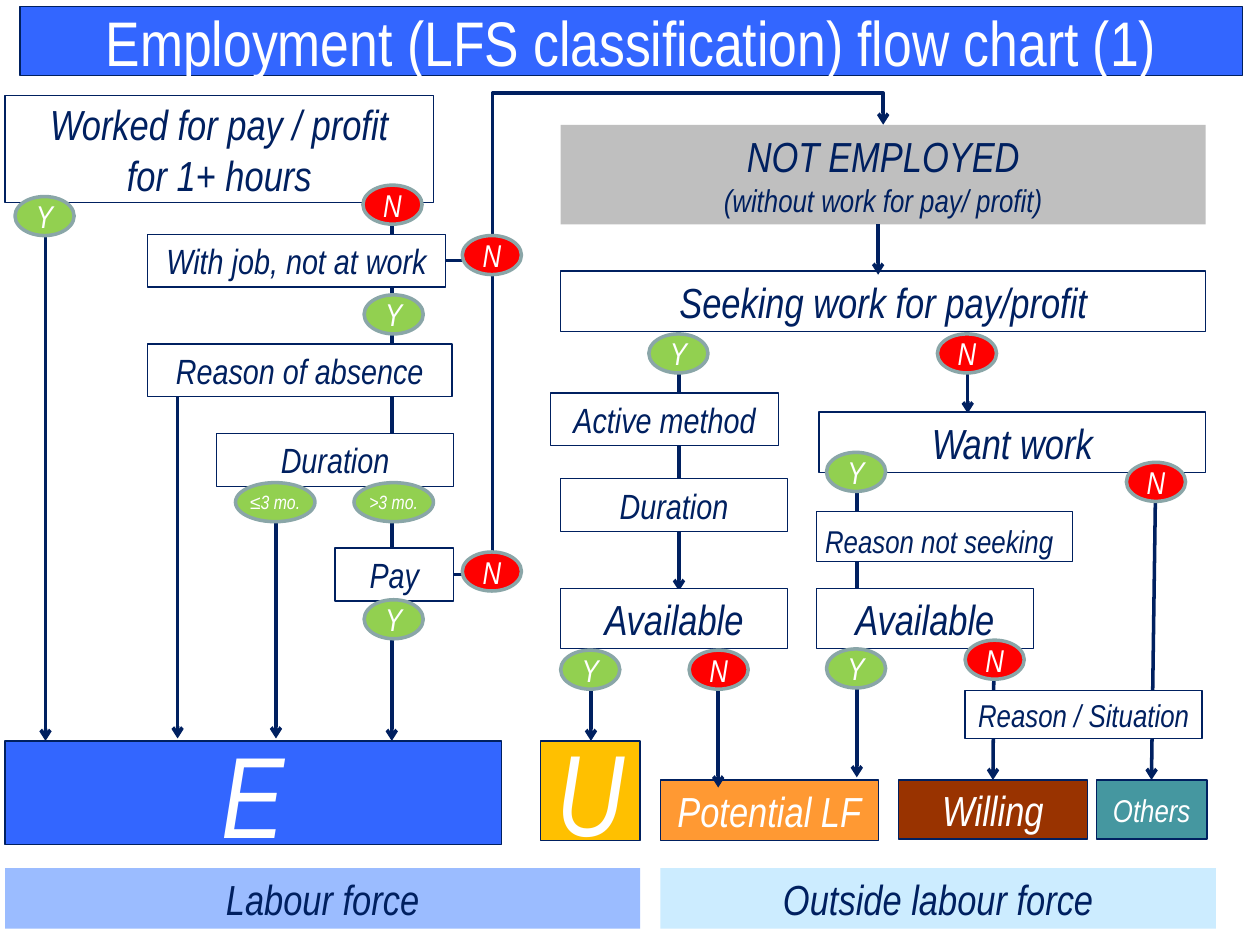
from lxml import etree
from pptx import Presentation
from pptx.dml.color import RGBColor
from pptx.enum.shapes import MSO_CONNECTOR, MSO_SHAPE
from pptx.enum.text import MSO_ANCHOR, PP_ALIGN
from pptx.oxml.ns import qn
from pptx.util import Pt

RECT, OVAL = MSO_SHAPE.RECTANGLE, MSO_SHAPE.OVAL
LINE, ELBOW = MSO_CONNECTOR.STRAIGHT, MSO_CONNECTOR.ELBOW
MIDDLE, BOTTOM = MSO_ANCHOR.MIDDLE, MSO_ANCHOR.BOTTOM
CENTER = PP_ALIGN.CENTER
FONT = "Arial Narrow"
HEX = {
    "navy": "002060", "white": "FFFFFF", "blue": "3366FF", "grey": "BFBFBF",
    "gold": "FFC000", "orange": "FF9933", "brown": "993300", "teal": "4597A0",
    "pale": "9BBCFF", "sky": "CCECFF", "green": "92D050", "red": "FF0000",
    "rim": "8AA6A8",
}
COLOR = {name: RGBColor.from_string(code) for name, code in HEX.items()}

deck = Presentation()
deck.slide_width, deck.slide_height = Pt(720), Pt(540)
slide = deck.slides.add_slide(deck.slide_layouts[6])
shapes = slide.shapes


def label(text, place, kind=RECT, size=24, fill="white", ink="navy",
          edge="navy", width=0.75, pad=(3, 3, 3, 3), italic=True,
          anchor=MIDDLE, sub=None):
    """Add a filled shape with text; sub is the size of lines after the first."""
    shape = shapes.add_shape(kind, *map(Pt, place))
    shape.shadow.inherit = False
    shape.fill.solid()
    shape.fill.fore_color.rgb = COLOR[fill]
    if edge:
        shape.line.color.rgb = COLOR[edge]
        shape.line.width = Pt(width)
    else:
        shape.line.fill.background()
    frame = shape.text_frame
    frame.word_wrap = True
    frame.vertical_anchor = anchor
    (frame.margin_left, frame.margin_top,
     frame.margin_right, frame.margin_bottom) = map(Pt, pad)
    frame.text = text
    for i, para in enumerate(frame.paragraphs):
        para.alignment = CENTER
        for run in para.runs:
            font = run.font
            font.name, font.italic = FONT, italic
            font.size = Pt(sub if i and sub else size)
            font.color.rgb = COLOR[ink]
    return shape


def link(x1, y1, x2, y2, kind=LINE, arrow=True):
    wire = shapes.add_connector(kind, Pt(x1), Pt(y1), Pt(x2), Pt(y2))
    wire.line.color.rgb = COLOR["navy"]
    wire.line.width = Pt(2)
    if arrow:
        tail = etree.SubElement(wire.line._get_or_add_ln(), qn("a:tailEnd"))
        tail.set("type", "arrow")
    etree.SubElement(wire._element.spPr, qn("a:effectLst"))
    return wire


# Arrows that run behind the boxes
for ends in [
    (337.7, 366, 337.7, 423.4), (660.2, 287.3, 658, 445.7),
    (388, 191, 388, 337.7), (553, 187, 553, 236.2),
    (223.9, 122.4, 223.9, 423.4), (489.6, 281.5, 489.6, 444.2),
    (26, 111.6, 26, 423.4), (568, 376.6, 567.4, 445.7),
    (157.7, 275.8, 157.7, 422), (101.5, 224.6, 101.5, 422),
]:
    link(*ends)
link(259.2, 328.2, 281.5, 328.2, arrow=False)
link(281.5, 328.2, 281.5, 157.7, arrow=False)

# Title and outcomes
label("Employment (LFS classification) flow chart (1)",
      (11.5, 3.6, 698.4, 39.6), size=36, fill="blue", ink="white",
      italic=False, pad=(7.2, 3.6, 7.2, 3.6))
for text, place, fill, size in [
    ("E", (2.9, 423.4, 283.7, 59), "blue", 66),
    ("U", (308.9, 423.4, 56.9, 56.9), "gold", 66),
    ("Potential LF", (377.3, 445.7, 124.6, 34.6), "orange", 24),
    ("Willing", (513.4, 445.7, 108, 33.8), "brown", 24),
    ("Others", (626.4, 445.7, 63.4, 33.8), "teal", 18),
]:
    label(text, place, fill=fill, ink="white", size=size)
for text, left, width, fill in [
    ("Labour force", 2.9, 362.9, "pale"),
    ("Outside labour force", 377.3, 317.5, "sky"),
]:
    label(text, (left, 496.1, width, 34.6), fill=fill, edge=None)

# Questions
label("Worked for pay / profit\nfor 1+ hours", (2.9, 54.7, 244.8, 61.2),
      pad=(3, 1.5, 3, 1.5))
idle = label("NOT EMPLOYED\n(without work for pay/ profit)",
             (320.4, 71.3, 368.6, 56.9), fill="grey", edge=None, sub=18)
away = label("With job, not at work", (84.2, 133.9, 170.6, 30.2), size=20)
for text, place, size in [
    ("Reason of absence", (84.2, 196.6, 174.2, 30.2), 20),
    ("Duration", (123.8, 247.7, 135.4, 30.2), 20),
    ("Pay", (191.5, 313.2, 67.7, 30.2), 20),
    ("Seeking work for pay/profit", (320.4, 154.8, 368.6, 34.6), 24),
    ("Active method", (314.6, 224.6, 130.3, 30.2), 20),
    ("Duration", (320.4, 273.6, 129.6, 30.2), 20),
    ("Available", (320.4, 336.2, 129.6, 34.6), 24),
    ("Want work", (468, 235.4, 221, 34.6), 24),
    ("Available", (466.6, 336.2, 123.8, 34.6), 24),
    ("Reason / Situation", (551.5, 394.6, 135.4, 27.4), 18),
]:
    label(text, place, size=size)
label("Reason not seeking", (466.6, 292.3, 146.2, 28.8), size=18,
      pad=(3, 0, 9, 1), anchor=BOTTOM)

# Arrows in front of the boxes
link(410.4, 371.5, 410.4, 450)
link(501.8, 128.2, 501.8, 157)
detour = link(254.9, 149, 504.7, 71.3, kind=ELBOW)
detour.begin_connect(away, 3)
detour.end_connect(idle, 0)
geom = detour._element.spPr.find(qn("a:prstGeom"))
geom.set("prst", "bentConnector4")
guides = geom.find(qn("a:avLst"))
for name, value in [("adj1", 10700), ("adj2", 123300)]:
    guide = etree.SubElement(guides, qn("a:gd"))
    guide.set("name", name)
    guide.set("fmla", f"val {value}")

# Answers
for text, fill, size, width, spots in [
    ("Y", "green", 18, 33.8, [
        (8.6, 112.3), (208.1, 168.5), (208.1, 342.7), (370.8, 190.8),
        (320.4, 371.5), (472.3, 258.5), (472.3, 370.8)]),
    ("N", "red", 18, 33.8, [
        (207.4, 105.8), (264.2, 134.6), (264.2, 315.4), (535.7, 190.8),
        (643.7, 264.2), (393.8, 371.5), (551.5, 365.8)]),
    ("≤3 mo.", "green", 11, 45.4, [(134.6, 275.8)]),
    (">3 mo.", "green", 11, 45.4, [(202.3, 275.8)]),
]:
    for left, top in spots:
        label(text, (left, top, width, 22.3), kind=OVAL, size=size, fill=fill,
              ink="white", edge="rim", width=2, pad=(0, 0, 0, 0))

deck.save("out.pptx")
